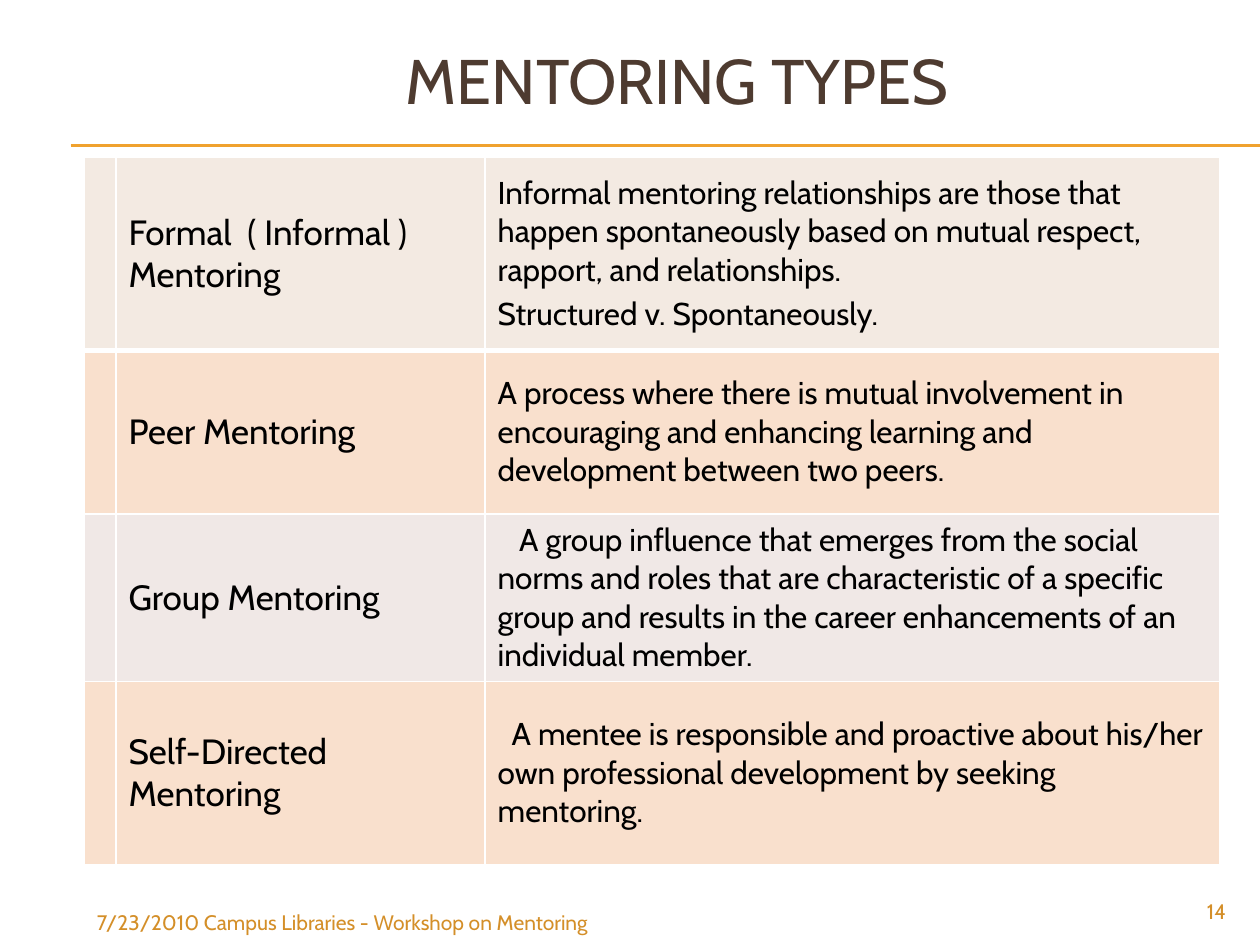
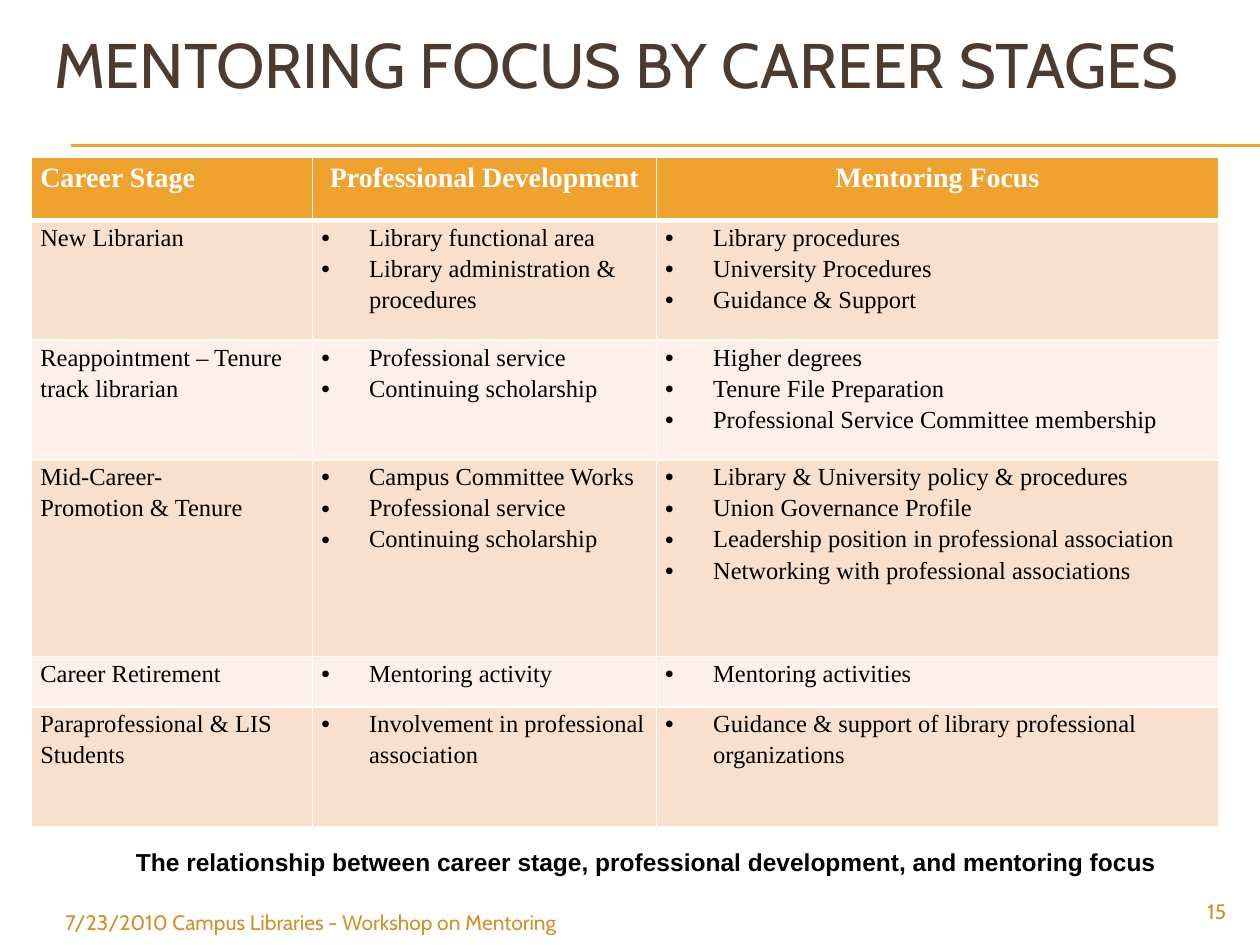
from dataclasses import dataclass

from lxml.etree import SubElement
from pptx import Presentation
from pptx.dml.color import RGBColor
from pptx.enum.shapes import MSO_CONNECTOR as Connector
from pptx.enum.text import MSO_ANCHOR as Anchor, MSO_AUTO_SIZE as AutoSize, PP_ALIGN as Align
from pptx.oxml import parse_xml
from pptx.oxml.ns import nsdecls, qn
from pptx.util import Emu, Inches, Pt


@dataclass(frozen=True)
class Theme:
    title_font: str = "Cabin"
    table_font: str = "Times New Roman"
    caption_font: str = "Arial"
    brown: str = "4E3B30"
    gold: str = "F0A22E"
    dark_gold: str = "D48F29"
    black: str = "000000"
    white: str = "FFFFFF"
    sand: str = "F3EAE2"
    peach: str = "F9E0CD"
    mauve: str = "F0E8E6"
    pale_peach: str = "FCF0E8"
    title_size: int = 36
    type_size: int = 20
    description_size: int = 18
    header_size: int = 16
    stage_size: int = 14
    footer_size: int = 12


THEME = Theme()
FOOTER = "7/23/2010 Campus Libraries - Workshop on Mentoring"

# Mentoring types: name, description paragraphs, first-line indent, row colour, row height
TYPES = [
    ("Formal  ( Informal ) Mentoring",
     ["Informal mentoring relationships are those that happen spontaneously "
      "based on mutual respect, rapport, and relationships.",
      "Structured v. Spontaneously."], 0, THEME.sand, 1.53),
    ("Peer Mentoring",
     ["A process where there is mutual involvement in encouraging and enhancing "
      "learning and development between two peers."], 0, THEME.peach, 1.3),
    ("Group Mentoring",
     ["A group influence that emerges from the social norms and roles that are "
      "characteristic of a specific group and results in the career enhancements "
      "of an individual member."], 0.17, THEME.mauve, 1.33),
    ("Self-Directed Mentoring",
     ["A mentee is responsible and proactive about his/her own professional "
      "development by seeking mentoring."], 0.11, THEME.peach, 1.45),
]
TYPE_COLUMNS = [0.25, 2.93, 5.83]

# Career stages: stage, professional development, mentoring focus, row height
STAGE_HEADER = ["Career Stage", "Professional Development", "Mentoring Focus"]
HEADER_HEIGHT = 0.5
STAGES = [
    (["New Librarian"],
     ["Library functional area", "Library administration & procedures"],
     ["Library procedures", "University Procedures", "Guidance & Support"], 0.95),
    (["Reappointment – Tenure track librarian"],
     ["Professional service", "Continuing scholarship"],
     ["Higher degrees", "Tenure File Preparation",
      "Professional Service Committee membership"], 0.95),
    (["Mid-Career-", "Promotion & Tenure"],
     ["Campus Committee Works", "Professional service", "Continuing scholarship"],
     ["Library & University policy & procedures", "Union Governance Profile",
      "Leadership position in professional association",
      "Networking with professional associations"], 1.56),
    (["Career Retirement"], ["Mentoring activity"], ["Mentoring activities"], 0.4),
    (["Paraprofessional & LIS Students"],
     ["Involvement in professional association"],
     ["Guidance & support of library professional organizations"], 0.95),
]
STAGE_COLUMNS = [2.23, 2.73, 4.46]
STAGE_CAPTION = "The relationship between career stage, professional development, and mentoring focus"


def write_text(frame, paragraphs, *, font, size, color, bold=False, align=Align.LEFT,
               line_spacing=None, space_before=0, margin=0, first_line=0, bullet=None):
    """Fill a text frame with equally formatted paragraphs."""
    for index, text in enumerate(paragraphs):
        paragraph = frame.paragraphs[0] if index == 0 else frame.add_paragraph()
        paragraph.alignment = align
        paragraph.space_before = Pt(space_before)
        if line_spacing:
            paragraph.line_spacing = line_spacing
        properties = paragraph._p.get_or_add_pPr()
        properties.set("marL", str(Inches(margin)))
        properties.set("indent", str(Inches(first_line)))
        if bullet:
            SubElement(properties, qn("a:buFont")).set("typeface", THEME.caption_font)
            SubElement(properties, qn("a:buChar")).set("char", bullet)
        run = paragraph.add_run()
        run.text = text
        run.font.name = font
        run.font.size = Pt(size)
        run.font.bold = bold
        run.font.color.rgb = RGBColor.from_string(color)


def add_text(slide, box, text, **text_format):
    shape = slide.shapes.add_textbox(*map(Inches, box))
    shape.text_frame.word_wrap = True
    write_text(shape.text_frame, [text], **text_format)


def add_rule(slide, top):
    line = slide.shapes.add_connector(
        Connector.STRAIGHT, Inches(0.56), Inches(top), Inches(10), Inches(top))
    line.line.color.rgb = RGBColor.from_string(THEME.gold)
    line.line.width = Pt(0.75)
    SubElement(line._element.spPr, qn("a:effectLst"))


def add_base_slide(presentation, title, title_box, number, footer_box,
                   align=Align.LEFT, title_margin=0):
    """Add a slide with the shared rules, title, footer and number."""
    slide = presentation.slides.add_slide(presentation.slide_layouts[5])
    for top in (1.15, 1.16):
        add_rule(slide, top)
    shape = slide.shapes.title
    shape.left, shape.top, shape.width, shape.height = map(Inches, title_box)
    frame = shape.text_frame
    frame.auto_size = AutoSize.NONE
    frame.vertical_anchor = Anchor.MIDDLE
    write_text(frame, [title], font=THEME.title_font, size=THEME.title_size,
               color=THEME.brown, align=align, margin=title_margin)
    small = dict(font=THEME.title_font, size=THEME.footer_size, color=THEME.dark_gold)
    add_text(slide, footer_box, FOOTER, **small)
    add_text(slide, (9, 7.08, 0.83, 0.27), str(number), align=Align.RIGHT, **small)
    return slide


def add_grid(slide, left, top, columns, rows):
    """Add a plain table sized by its column widths and row heights."""
    widths, heights = list(map(Inches, columns)), list(map(Inches, rows))
    table = slide.shapes.add_table(
        len(rows), len(columns), Inches(left), Inches(top),
        Emu(sum(widths)), Emu(sum(heights))).table
    table.first_row = table.horz_banding = False
    for column, width in zip(table.columns, widths):
        column.width = width
    for row, height in zip(table.rows, heights):
        row.height = height
    return table


def style_cell(cell, fill, heavy_top=False, heavy_bottom=False):
    """Give a cell white borders and a solid fill."""
    weights = {"lnL": 1, "lnR": 1, "lnT": 3 if heavy_top else 1,
               "lnB": 3 if heavy_bottom else 1}
    properties = cell._tc.get_or_add_tcPr()
    for side, weight in weights.items():
        properties.append(parse_xml(
            f'<a:{side} {nsdecls("a")} w="{Pt(weight)}"><a:solidFill>'
            f'<a:srgbClr val="{THEME.white}"/></a:solidFill></a:{side}>'))
    cell.fill.solid()
    cell.fill.fore_color.rgb = RGBColor.from_string(fill)


def build_types_slide(presentation):
    slide = add_base_slide(presentation, "MENTORING TYPES", (1, 0.17, 7.75, 0.92), 14,
                           (0.67, 7.17, 4.42, 0.33), align=Align.CENTER, title_margin=1)
    table = add_grid(slide, 0.67, 1.25, TYPE_COLUMNS, [entry[-1] for entry in TYPES])
    for row, (name, description, first_line, fill, _) in enumerate(TYPES):
        for column in range(len(TYPE_COLUMNS)):
            cell = table.cell(row, column)
            style_cell(cell, fill, heavy_top=row == 1, heavy_bottom=row == 0)
            cell.vertical_anchor = Anchor.MIDDLE
        for column, texts, size, indent in (
                (1, [name], THEME.type_size, 0),
                (2, description, THEME.description_size, first_line)):
            write_text(table.cell(row, column).text_frame, texts, font=THEME.title_font,
                       size=size, color=THEME.black, space_before=size * 0.2,
                       first_line=indent)


def build_stages_slide(presentation):
    slide = add_base_slide(presentation, "MENTORING FOCUS BY CAREER STAGES",
                           (0.33, 0, 9.5, 1), 15, (0.42, 7.17, 4.25, 0.49))
    heights = [HEADER_HEIGHT] + [entry[-1] for entry in STAGES]
    table = add_grid(slide, 0.25, 1.25, STAGE_COLUMNS, heights)
    table.first_row = True
    contents = [[[label] for label in STAGE_HEADER]] + [entry[:-1] for entry in STAGES]
    for row, cells in enumerate(contents):
        header = row == 0
        fill = THEME.gold if header else (THEME.pale_peach, THEME.peach)[row % 2]
        for column, texts in enumerate(cells):
            cell = table.cell(row, column)
            style_cell(cell, fill, heavy_top=row == 1, heavy_bottom=header)
            cell.margin_left = cell.margin_right = Inches(0.07)
            cell.margin_top = cell.margin_bottom = 0
            if header:
                look = dict(size=THEME.header_size, color=THEME.white, bold=True,
                            align=Align.CENTER if column else Align.LEFT)
            else:
                look = dict(size=THEME.stage_size, color=THEME.black)
                if column:
                    look.update(bullet="•", margin=0.38, first_line=-0.38)
            write_text(cell.text_frame, texts, font=THEME.table_font,
                       line_spacing=1.15, **look)
    # Caption under the table
    add_text(slide, (0.33, 6.67, 9.25, 0.34), STAGE_CAPTION, font=THEME.caption_font,
             size=THEME.stage_size, color=THEME.black, bold=True, margin=0.65)


def main():
    presentation = Presentation()
    presentation.slide_width, presentation.slide_height = Inches(10), Inches(7.5)
    build_types_slide(presentation)
    build_stages_slide(presentation)
    presentation.save("out.pptx")


if __name__ == "__main__":
    main()
